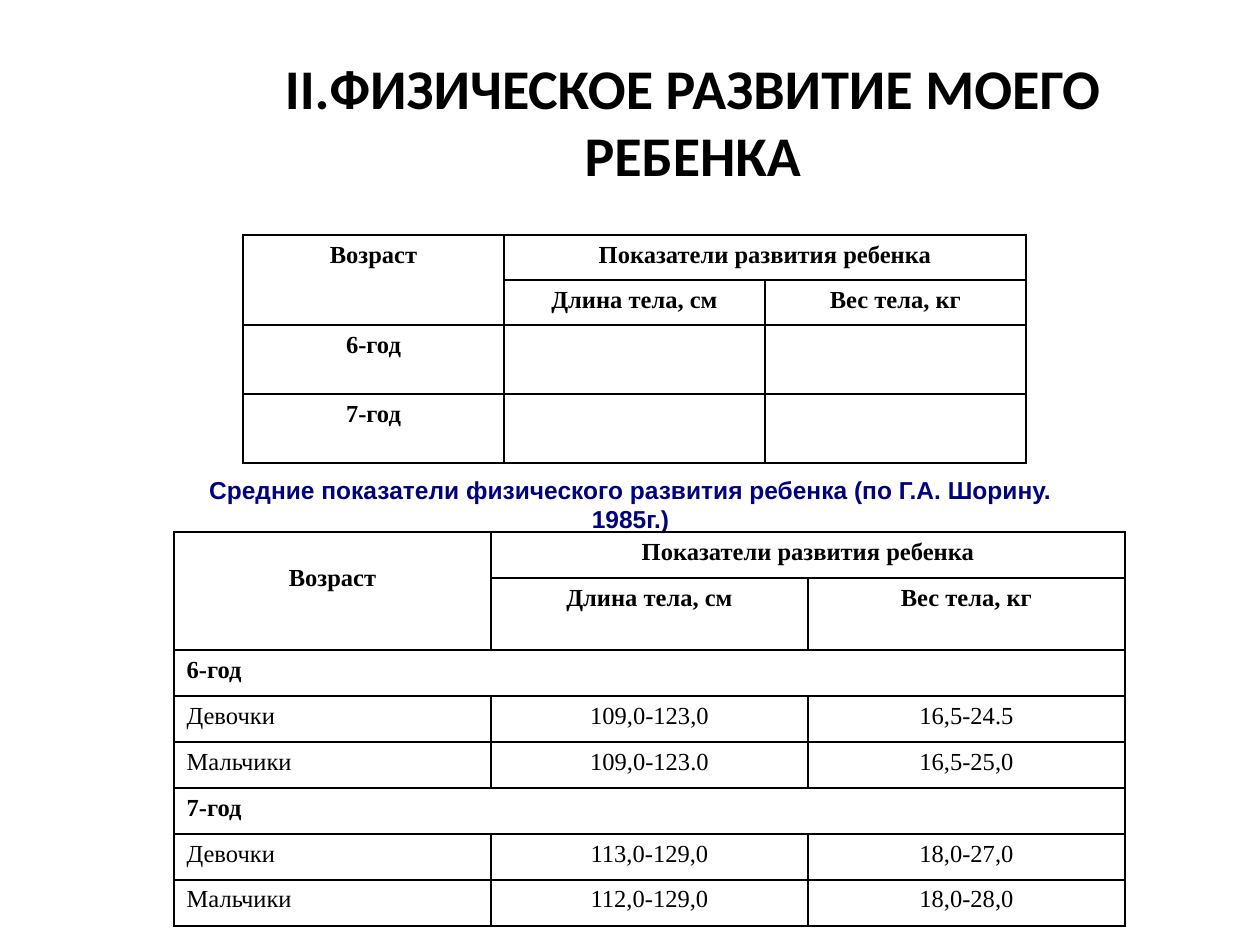
import pptx
import pptx.util
from dataclasses import dataclass
from lxml import etree
from pptx.dml.color import RGBColor
from pptx.enum.text import MSO_ANCHOR, MSO_AUTO_SIZE, PP_ALIGN
from pptx.oxml.ns import qn

PIXELS_PER_INCH = 126


@dataclass(frozen=True)
class Theme:
    ink: str = "000000"
    caption: str = "000080"
    title_font: str = "Calibri"
    caption_font: str = "Arial"
    table_font: str = "Times New Roman"
    title_size: int = 32
    body_size: int = 14
    border_width: int = 1


THEME = Theme()

HEADER = [
    ["Возраст", "Показатели развития ребенка", ""],
    ["", "Длина тела, см", "Вес тела, кг"],
]
HEADER_SPANS = [((0, 0), (1, 0)), ((0, 1), (0, 2))]
CHILD_ROWS = [["6-год", "", ""], ["7-год", "", ""]]
AVERAGE_ROWS = [
    ["6-год", "", ""],
    ["Девочки", "109,0-123,0", "16,5-24.5"],
    ["Мальчики", "109,0-123.0", "16,5-25,0"],
    ["7-год", "", ""],
    ["Девочки", "113,0-129,0", "18,0-27,0"],
    ["Мальчики", "112,0-129,0", "18,0-28,0"],
]


def px(length):
    return pptx.util.Emu(round(length * 914400 / PIXELS_PER_INCH))


def write_text(frame, text, *, font, size=THEME.body_size, color=THEME.ink,
               bold=True, align=PP_ALIGN.CENTER):
    paragraph = frame.paragraphs[0]
    paragraph.alignment = align
    run = paragraph.add_run()
    run.text = text
    run.font.name = font
    run.font.size = pptx.util.Pt(size)
    run.font.bold = bold
    run.font.color.rgb = RGBColor.from_string(color)


def add_title(slide, text, left, top, width, height):
    title = slide.shapes.title
    title.left, title.top = px(left), px(top)
    title.width, title.height = px(width), px(height)
    frame = title.text_frame
    frame.word_wrap = True
    frame.auto_size = MSO_AUTO_SIZE.NONE
    frame.vertical_anchor = MSO_ANCHOR.MIDDLE
    write_text(frame, text, font=THEME.title_font, size=THEME.title_size)


def add_caption(slide, text, left, top, width, height):
    box = slide.shapes.add_textbox(px(left), px(top), px(width), px(height))
    frame = box.text_frame
    frame.word_wrap = True
    frame.margin_top = frame.margin_bottom = 0
    frame.vertical_anchor = MSO_ANCHOR.MIDDLE
    write_text(frame, text, font=THEME.caption_font, color=THEME.caption)


def format_cell(cell):
    """Outline a cell on all sides and leave it unfilled."""
    properties = cell._tc.get_or_add_tcPr()
    for side in ("lnL", "lnR", "lnT", "lnB"):
        line = etree.SubElement(properties, qn(f"a:{side}"),
                                w=str(pptx.util.Pt(THEME.border_width)))
        fill = etree.SubElement(line, qn("a:solidFill"))
        etree.SubElement(fill, qn("a:srgbClr"), val=THEME.ink)
    cell.fill.background()


def add_table(slide, rows, left, top, column_width, row_heights, spans,
              label_align=PP_ALIGN.CENTER):
    columns = len(rows[0])
    table = slide.shapes.add_table(
        len(rows), columns, px(left), px(top),
        px(column_width * columns), px(sum(row_heights))).table
    table.first_row = table.horz_banding = False
    for column in table.columns:
        column.width = px(column_width)
    for row, height in zip(table.rows, row_heights):
        row.height = px(height)
    for start, end in spans:
        table.cell(*start).merge(table.cell(*end))

    for row_index, values in enumerate(rows):
        is_header = row_index < len(HEADER)
        is_bold = is_header or not all(values)
        for column_index, text in enumerate(values):
            cell = table.cell(row_index, column_index)
            format_cell(cell)
            if text:
                is_label = column_index == 0 and not is_header
                write_text(cell.text_frame, text, font=THEME.table_font, bold=is_bold,
                           align=label_align if is_label else PP_ALIGN.CENTER)
            else:
                # Blank cells must not stretch their row
                cell.margin_top = cell.margin_bottom = 0
    return table


def main():
    presentation = pptx.Presentation()
    presentation.slide_width, presentation.slide_height = px(1260), px(945)
    slide = presentation.slides.add_slide(presentation.slide_layouts[5])

    # Heading
    add_title(slide, "II.ФИЗИЧЕСКОЕ РАЗВИТИЕ МОЕГО РЕБЕНКА", 189, 42, 1008, 158)

    # Reference values with their caption
    add_caption(slide, "Средние показатели физического развития ребенка "
                       "(по Г.А. Шорину. 1985г.)", 184, 483, 893, 42)
    group_spans = [((row, 0), (row, 2)) for row in (2, 5)]
    averages = add_table(slide, HEADER + AVERAGE_ROWS, 174, 532, 317,
                         [46, 72] + [46] * len(AVERAGE_ROWS),
                         HEADER_SPANS + group_spans, label_align=PP_ALIGN.LEFT)
    averages.cell(0, 0).margin_top = px(33)

    # Form for the child's own values
    add_table(slide, HEADER + CHILD_ROWS, 243, 235, 261, [45, 45, 69, 69], HEADER_SPANS)

    presentation.save("out.pptx")


if __name__ == "__main__":
    main()
